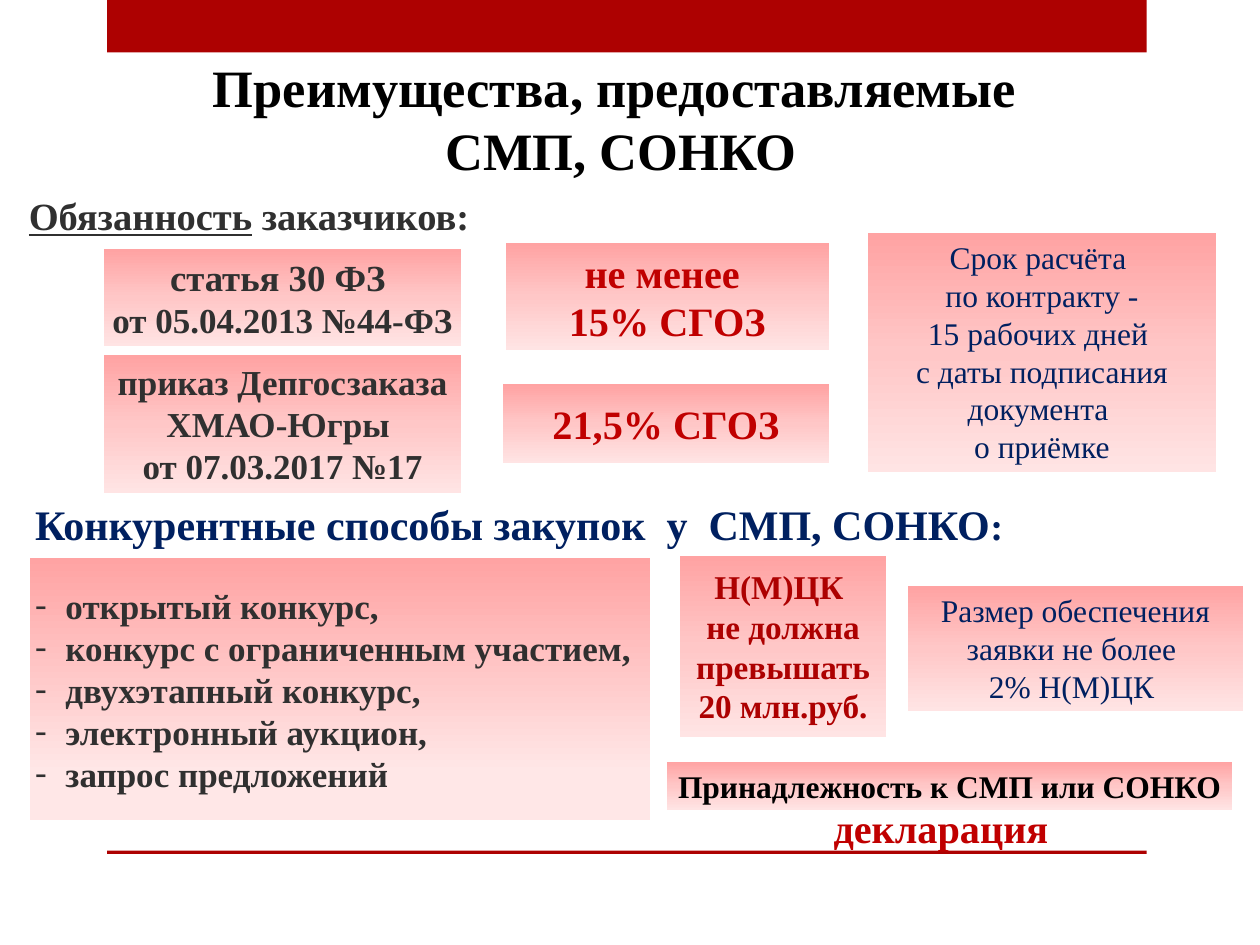
from copy import deepcopy

from lxml.etree import SubElement
from pptx import Presentation
from pptx.dml.color import RGBColor
from pptx.enum.shapes import MSO_SHAPE as Preset
from pptx.enum.text import MSO_ANCHOR as Anchor, MSO_AUTO_SIZE as AutoSize, PP_ALIGN as Align
from pptx.oxml.ns import qn
from pptx.util import Pt

COLORS = {
    "bar": "AD0101", "accent": "C00000", "text": "303030", "navy": "002060",
    "black": "000000", "top": "FFA3A3", "middle": "FFC7C7", "pale": "FFE7E7", "bottom": "FFE4E4",
}
CARD_STOPS = ((0, "top"), (0.5, "middle"), (1, "bottom"))
LIST_STOPS = ((0, "top"), (0.82, "pale"), (1, "bottom"))


def rgb(name):
    """Return the named colour."""
    return RGBColor.from_string(COLORS[name])


def place(shape, box):
    """Move a shape to a (left, top, width, height) box in points."""
    for side, length in zip(("left", "top", "width", "height"), box):
        setattr(shape, side, Pt(length))


def shift(box, left, top, width, height):
    """Return a box whose corner is relative to the corner of a region."""
    return box[0] + left, box[1] + top, width, height


def paint_gradient(shape, stops):
    """Fill a shape with a vertical gradient."""
    shape.fill.gradient()
    shape.fill.gradient_angle = 270
    stop_list = shape._element.spPr.find(qn("a:gradFill")).find(qn("a:gsLst"))
    stop_list.insert(1, deepcopy(stop_list[0]))
    for stop, (position, color) in zip(shape.fill.gradient_stops, stops):
        stop.position = position
        stop.color.rgb = rgb(color)


def write(shape, lines, size, color, bold=True, align=Align.CENTER, anchor=Anchor.TOP,
          inset=(2.88, 2.88), wrap=True):
    """Write lines of (text, format) runs, or plain strings, into a shape."""
    frame = shape.text_frame
    across, down = map(Pt, inset)
    settings = {
        "auto_size": AutoSize.NONE, "word_wrap": wrap, "vertical_anchor": anchor,
        "margin_left": across, "margin_right": across, "margin_top": down, "margin_bottom": down,
    }
    for name, value in settings.items():
        setattr(frame, name, value)
    for index, line in enumerate(lines):
        paragraph = frame.paragraphs[0] if index == 0 else frame.add_paragraph()
        paragraph.alignment = align
        paragraph.space_before = Pt(0)
        for text, special in [(line, {})] if isinstance(line, str) else line:
            run = paragraph.add_run()
            run.text = text
            run.font.color.rgb = rgb(color)
            formats = {"name": "Times New Roman", "size": Pt(size), "bold": bold, **special}
            for name, value in formats.items():
                setattr(run.font, name, value)


def add_rectangle(slide, box):
    """Add a rectangle without outline or shadow."""
    rectangle = slide.shapes.add_shape(Preset.RECTANGLE, *map(Pt, box))
    rectangle.shadow.inherit = False
    rectangle.line.fill.background()
    return rectangle


def add_card(slide, box, lines, size, color, **options):
    """Add a gradient card with centred text."""
    card = add_rectangle(slide, box)
    paint_gradient(card, CARD_STOPS)
    write(card, lines, size, color, **options)


def add_label(slide, box, lines, size, color, **options):
    """Add a text box on one line."""
    label = slide.shapes.add_textbox(*map(Pt, box))
    write(label, lines, size, color, wrap=False, **options)


def add_frame(slide, box):
    """Add the red band above the content and the thin rule below it."""
    for band in (shift(box, 0, 0, box[2], 30), shift(box, 0, box[3] - 2, box[2], 2)):
        bar = add_rectangle(slide, band)
        bar.fill.solid()
        bar.fill.fore_color.rgb = rgb("bar")


def add_heading(slide, box):
    """Fill the title placeholder."""
    place(slide.shapes.title, box)
    write(slide.shapes.title, ["Преимущества, предоставляемые ", "СМП, СОНКО"], 30, "black")


def add_duties(slide, box):
    """Add the customers' duties: legal acts, shares and payment term."""
    add_label(slide, shift(box, 0, 0, 268.5, 34),
              [[("Обязанность", {"underline": True}), (" заказчиков:", {})]], 22, "text",
              align=Align.LEFT, anchor=Anchor.MIDDLE, inset=(7.2, 3.6))
    add_card(slide, shift(box, 50, 36.7, 204, 55.5),
             [[("статья 30 ФЗ ", {"size": Pt(21)})], "от 05.04.2013 №44-ФЗ"], 20, "text")
    add_card(slide, shift(box, 50, 97.2, 204, 78.5),
             ["приказ Депгосзаказа ХМАО-Югры ", "от 07.03.2017 №17"], 20, "text")
    add_card(slide, shift(box, 279.5, 33.2, 185, 61), ["не менее ", "15% СГОЗ"], 23, "accent")
    add_card(slide, shift(box, 278, 113.8, 186.5, 45.3), ["21,5% СГОЗ"], 23, "accent",
             inset=(2.88, 8.64))
    add_card(slide, shift(box, 486.7, 27.4, 198.7, 136.8),
             ["Срок расчёта ", "по контракту -", "15 рабочих дней ",
              "с даты подписания документа ", "о приёмке"], 18, "navy", bold=False)


def add_methods(slide, box):
    """Fill the body placeholder with the dashed list of purchase methods."""
    methods = slide.placeholders[1]
    place(methods, box)
    paint_gradient(methods, LIST_STOPS)
    write(methods, ["открытый конкурс,", "конкурс с ограниченным участием,", "двухэтапный конкурс,",
                    "электронный аукцион,", "запрос предложений"], 20, "text",
          align=Align.LEFT, anchor=Anchor.MIDDLE, inset=(2.88, 14.4))
    paragraphs = methods.text_frame.paragraphs
    paragraphs[-1].space_after = Pt(12)
    for paragraph in paragraphs:
        properties = paragraph._p.get_or_add_pPr()
        properties.set("marL", str(Pt(17.3)))
        properties.set("indent", str(Pt(-17.3)))
        SubElement(properties, qn("a:buFont")).set("typeface", "Times New Roman")
        SubElement(properties, qn("a:buChar")).set("char", "-")


def add_purchases(slide, box):
    """Add the competitive purchase methods and their conditions."""
    add_label(slide, shift(box, 0, 0, 573, 36),
              [[("Конкурентные способы закупок  у  СМП, СОНКО", {}), (":", {"size": Pt(22)})]],
              24, "navy", align=Align.LEFT, inset=(7.2, 3.6))
    add_methods(slide, shift(box, 4.2, 37.4, 354.3, 149.8))
    add_card(slide, shift(box, 375.6, 36.2, 117.8, 103.5),
             ["Н(М)ЦК ", "не должна превышать", "20 млн.руб."], 19, "bar", inset=(2.88, 5.76))
    add_card(slide, shift(box, 505.8, 53.4, 191.5, 71.3),
             ["Размер обеспечения заявки не более ", "2% Н(М)ЦК "], 18, "navy", bold=False)
    add_label(slide, shift(box, 460, 174.2, 129.6, 34), ["декларация"], 23, "accent",
              anchor=Anchor.MIDDLE)
    add_card(slide, shift(box, 368.2, 154, 323, 27.4), ["Принадлежность к СМП или СОНКО"],
             18, "black")


def main():
    """Build the slide and save it."""
    deck = Presentation()
    deck.slide_width, deck.slide_height = Pt(720), Pt(540)
    slide = deck.slides.add_slide(deck.slide_layouts[1])
    add_frame(slide, (61.2, 0, 594, 488))
    add_heading(slide, (60.5, 28.8, 589, 79.2))
    add_duties(slide, (9.4, 105.8, 685.4, 175.7))
    add_purchases(slide, (13, 281.5, 697.3, 208.2))
    deck.save("out.pptx")


if __name__ == "__main__":
    main()
